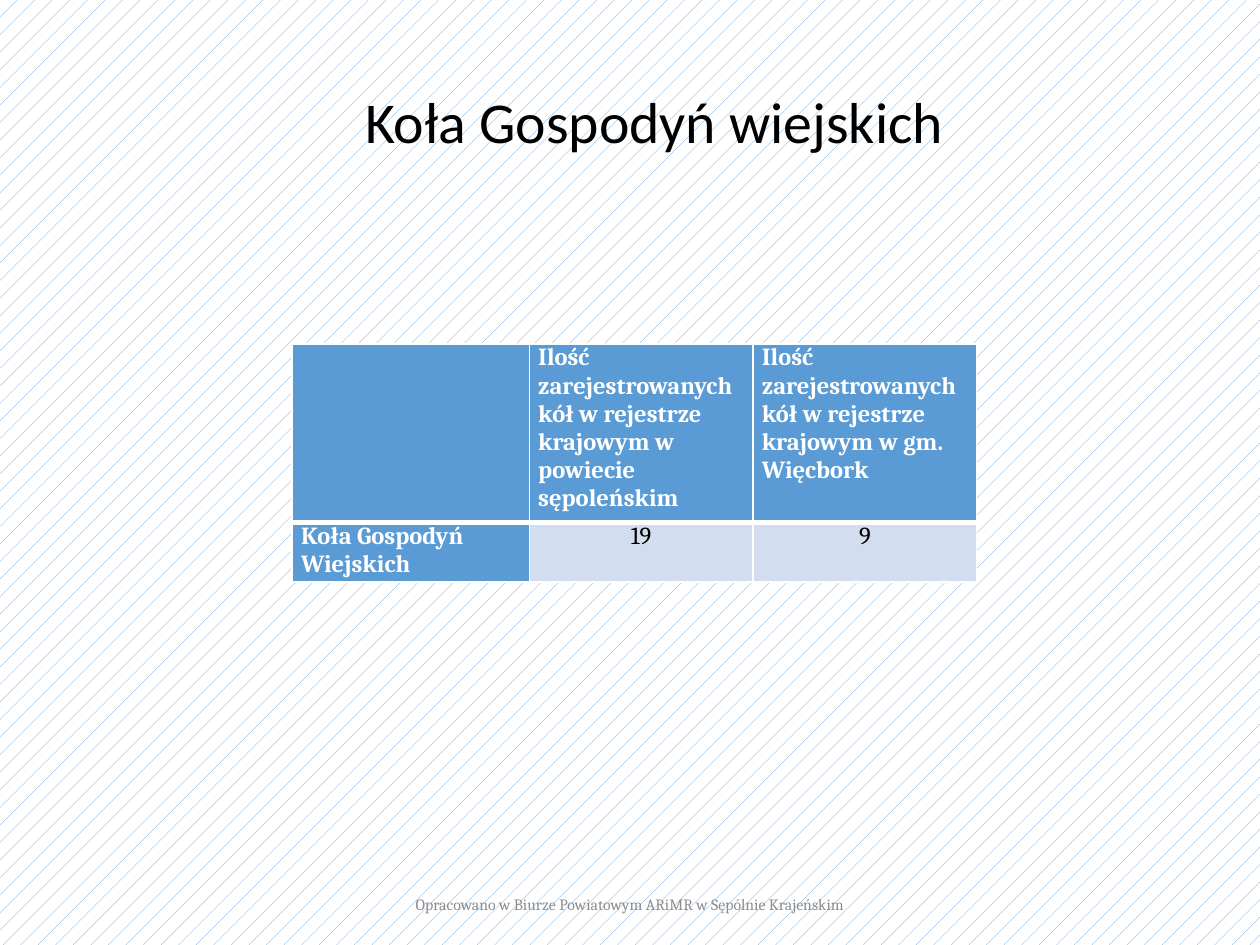
from dataclasses import dataclass

from lxml.etree import SubElement
from pptx import Presentation
from pptx.dml.color import RGBColor
from pptx.enum.dml import MSO_PATTERN
from pptx.enum.text import MSO_ANCHOR, PP_ALIGN
from pptx.oxml.ns import qn
from pptx.util import Cm, Pt


@dataclass(frozen=True)
class Theme:
    blue: str = "5B9BD5"
    pale_blue: str = "D2DEEF"
    white: str = "FFFFFF"
    black: str = "000000"
    gray: str = "8C8C8C"
    heading_font: str = "Calibri"
    body_font: str = "Cambria"
    title_size: float = 33
    table_size: float = 14
    footer_size: float = 9
    thin_line: float = 1
    thick_line: float = 3


def write_text(frame, text, *, font, size, color, bold=False,
               align=PP_ALIGN.LEFT, line_spacing=1.0):
    frame.word_wrap = True
    para = frame.paragraphs[0]
    para.alignment = align
    para.line_spacing = line_spacing
    span = para.add_run()
    span.text = text
    span.font.name = font
    span.font.size = Pt(size)
    span.font.bold = bold
    span.font.color.rgb = RGBColor.from_string(color)


class SlideBuilder:
    def __init__(self, page, theme):
        self.page = page
        self.theme = theme

    def add_background(self):
        fill = self.page.background.fill
        fill.patterned()
        fill.pattern = MSO_PATTERN.PERCENT_5
        fill.fore_color.rgb = RGBColor.from_string(self.theme.blue)
        fill.back_color.rgb = RGBColor.from_string(self.theme.white)

    def add_text(self, text, left, top, width, height, bottom_margin=0.13, **style):
        box = self.page.shapes.add_textbox(Cm(left), Cm(top), Cm(width), Cm(height))
        frame = box.text_frame
        frame.vertical_anchor = MSO_ANCHOR.MIDDLE
        frame.margin_bottom = Cm(bottom_margin)
        write_text(frame, text, **style)

    def add_borders(self, cell, widths):
        properties = cell._tc.get_or_add_tcPr()
        for position, (side, width) in enumerate(widths.items()):
            line = SubElement(properties, qn(f"a:ln{side}"), w=str(Pt(width)))
            fill = SubElement(line, qn("a:solidFill"))
            SubElement(fill, qn("a:srgbClr"), val=self.theme.white)
            properties.insert(position, line)

    def add_table(self, rows, left, top, widths, heights):
        theme = self.theme
        table = self.page.shapes.add_table(
            len(rows), len(widths), Cm(left), Cm(top),
            Cm(sum(widths)), Cm(sum(heights))).table
        for column, width in zip(table.columns, widths):
            column.width = Cm(width)
        for row_index, (texts, height) in enumerate(zip(rows, heights)):
            table.rows[row_index].height = Cm(height)
            for column_index, text in enumerate(texts):
                cell = table.cell(row_index, column_index)
                heading = row_index == 0 or column_index == 0
                cell.margin_left = cell.margin_right = Cm(0.18)
                cell.margin_top = cell.margin_bottom = 0
                cell.fill.solid()
                cell.fill.fore_color.rgb = RGBColor.from_string(
                    theme.blue if heading else theme.pale_blue)
                borders = dict.fromkeys("LRTB", theme.thin_line)
                borders["B" if row_index == 0 else "T"] = theme.thick_line
                self.add_borders(cell, borders)
                if text:
                    write_text(cell.text_frame, text, font=theme.body_font,
                               size=theme.table_size, bold=heading,
                               color=theme.white if heading else theme.black,
                               align=PP_ALIGN.LEFT if heading else PP_ALIGN.CENTER)


def main():
    theme = Theme()
    deck = Presentation()
    deck.slide_width, deck.slide_height = Cm(25.4), Cm(19.05)
    builder = SlideBuilder(deck.slides.add_slide(deck.slide_layouts[6]), theme)

    builder.add_background()
    builder.add_text("Koła Gospodyń wiejskich", 7.11, 1.12, 13.21, 4.06,
                     bottom_margin=1.4, font=theme.heading_font,
                     size=theme.title_size, color=theme.black, line_spacing=0.9)
    builder.add_table(
        [["", "Ilość zarejestrowanych kół w rejestrze krajowym w powiecie sępoleńskim",
          "Ilość zarejestrowanych kół w rejestrze krajowym w gm. Więcbork"],
         ["Koła Gospodyń Wiejskich", "19", "9"]],
        5.89, 6.93, widths=[4.78, 4.51, 4.51], heights=[3.6, 1.2])
    builder.add_text("Opracowano w Biurze Powiatowym ARiMR w Sępólnie Krajeńskim",
                     7.65, 17.73, 10.08, 1.02, font=theme.body_font,
                     size=theme.footer_size, color=theme.gray, align=PP_ALIGN.CENTER)
    deck.save("out.pptx")


if __name__ == "__main__":
    main()
